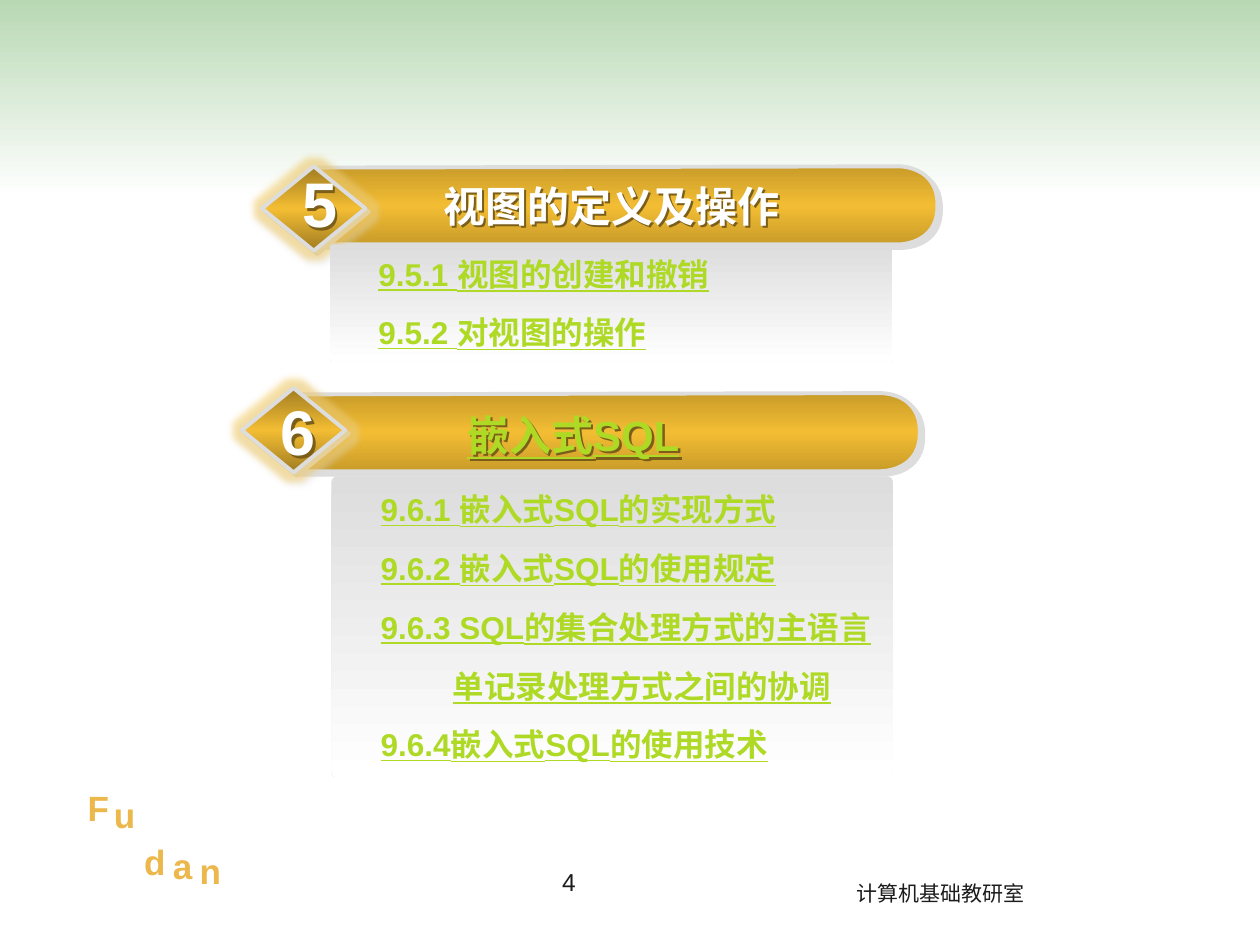
from lxml import etree
from pptx import Presentation
from pptx.dml.color import RGBColor
from pptx.enum.shapes import MSO_SHAPE
from pptx.enum.text import MSO_ANCHOR, PP_ALIGN
from pptx.oxml.ns import qn
from pptx.util import Inches, Pt

RECT, ROUND, DIAMOND = MSO_SHAPE.RECTANGLE, MSO_SHAPE.ROUNDED_RECTANGLE, MSO_SHAPE.DIAMOND
LEFT, MID = PP_ALIGN.LEFT, PP_ALIGN.CENTER
TOP, MIDDLE = MSO_ANCHOR.TOP, MSO_ANCHOR.MIDDLE

WIDE, HIGH = 10, 7.5
LATIN, CJK = "Arial", "Noto Sans CJK JP"
HUES = {
    "mint": "B8D8B3", "white": "FFFFFF", "ink": "1C1C1C", "lime": "AED925",
    "grey": "DDDDDD", "gold": "F3BD33", "ochre": "C99C2A", "bronze": "A07C22",
    "sand": "ECBA58", "honey": "ECB74B", "amber": "D9A622", "dusk": "7A5E19",
}
BAR_W, BAR_H = 4.96, 0.62
LETTERS = [("F", 0.31, 6.19), ("u", 0.52, 6.25), ("d", 0.76, 6.62),
           ("a", 0.98, 6.65), ("n", 1.2, 6.69)]
PARTS = [
    dict(num="5", bar=(2.49, 1.32), gem=(2.08, 1.32), mark=(2.3, 1.26),
         head="视图的定义及操作", spot=(2.89, 1.38, 3.92, 0.5), link=False,
         box=(2.62, 1.94, 4.46, 0.93),
         rows=["9.5.1 视图的创建和撤销", "9.5.2 对视图的操作"]),
    dict(num="6", bar=(2.35, 3.12), gem=(1.92, 3.08), mark=(2.13, 3.07),
         head="嵌入式SQL", spot=(2.75, 3.2, 3.6, 0.5), link=True,
         box=(2.63, 3.78, 4.46, 2.39),
         rows=["9.6.1 嵌入式SQL的实现方式", "9.6.2 嵌入式SQL的使用规定",
               "9.6.3 SQL的集合处理方式的主语言", "单记录处理方式之间的协调",
               "9.6.4嵌入式SQL的使用技术"]),
]


def tint(host, name, alpha=100):
    clr = etree.SubElement(host, qn("a:srgbClr"), val=HUES[name])
    if alpha < 100:
        etree.SubElement(clr, qn("a:alpha"), val=str(alpha * 1000))


def blend(fill, host, names):
    fill.gradient()
    fill.gradient_angle = 270
    stops = host.find(".//" + qn("a:gsLst"))
    for old in list(stops):
        stops.remove(old)
    for i, name in enumerate(names):
        pos = 100000 * i // (len(names) - 1)
        tint(etree.SubElement(stops, qn("a:gs"), pos=str(pos)), name)


def effect(shape, halo=0, drop=0, hue="grey"):
    shape.shadow.inherit = False
    host = shape._element.spPr.find(qn("a:effectLst"))
    if halo:
        tint(etree.SubElement(host, qn("a:glow"), rad=str(Pt(halo))), "gold", 40)
    if drop:
        node = etree.SubElement(host, qn("a:outerShdw"), dist=str(Pt(drop)),
                                dir="2700000", algn="ctr", rotWithShape="0")
        tint(node, hue)


def write(frame, rows, size=18, hue="ink", bold=False, under=False, align=LEFT,
          anchor=TOP, gap=0, dents=None):
    frame.word_wrap = True
    frame.vertical_anchor = anchor
    for i, row in enumerate(rows):
        para = frame.paragraphs[0] if i == 0 else frame.add_paragraph()
        para.alignment = align
        if i:
            para.space_before = Pt(gap)
        if dents:
            props = para._p.get_or_add_pPr()
            props.set("marL", "0")
            props.set("indent", str(Inches(dents[i])))
        run = para.add_run()
        run.text = row
        font = run.font
        font.size, font.bold, font.underline = Pt(size), bold, under
        props = run._r.get_or_add_rPr()
        if isinstance(hue, list):
            blend(font.fill, props, hue)
        else:
            font.color.rgb = RGBColor.from_string(HUES[hue])
        font.name = LATIN
        etree.SubElement(props, qn("a:ea"), typeface=CJK)


def label(slide, box, text, halo=0, drop=0, **form):
    area = slide.shapes.add_textbox(*map(Inches, box))
    write(area.text_frame, [text], **form)
    if halo or drop:
        effect(area, halo, drop, "dusk")


def paint(shape, names, edge=False, halo=0):
    blend(shape.fill, shape._element.spPr, names)
    if edge:
        shape.line.color.rgb = RGBColor.from_string(HUES["grey"])
        shape.line.width = Pt(2.25)
        effect(shape, halo, 2.8)
    else:
        shape.line.fill.background()
        effect(shape)


def block(slide, kind, box, names, **form):
    shape = slide.shapes.add_shape(kind, *map(Inches, box))
    paint(shape, names, **form)
    return shape


def curve(a, b, c, d, steps=16):
    for i in range(1, steps + 1):
        t = i / steps
        u = 1 - t
        yield tuple(u**3 * p + 3 * u * u * t * q + 3 * u * t * t * r + t**3 * s
                    for p, q, r, s in zip(a, b, c, d))


def banner(slide, left, top):
    bend, tip = BAR_W - 0.33, (BAR_W - 0.01, 0.32)
    points = [(0, BAR_H), (bend, BAR_H)]
    points += curve((bend, BAR_H), (4.75, BAR_H), (4.95, 0.56), tip)
    points += curve(tip, (BAR_W, 0.08), (4.78, 0), (bend, 0))
    pen = slide.shapes.build_freeform(0, Inches(0.01))
    pen.add_line_segments([(Inches(x), Inches(y)) for x, y in points], close=True)
    shape = pen.convert_to_shape(Inches(left), Inches(top))
    paint(shape, ["ochre", "gold", "ochre"], edge=True)


def panel(slide, box, rows):
    shape = block(slide, ROUND, box, ["grey", "white"])
    shape.adjustments[0] = 0.02
    shape.text_frame.margin_right = 0
    dents = [0.28 if row.startswith("9") else 0.85 for row in rows]
    write(shape.text_frame, rows, hue="lime", bold=True, under=True,
          anchor=MIDDLE, gap=12, dents=dents)


def part(slide, num, bar, gem, mark, head, spot, link, box, rows):
    banner(slide, *bar)
    block(slide, DIAMOND, (*gem, 0.82, 0.67), ["bronze", "gold", "bronze"],
          edge=True, halo=8)
    label(slide, (*mark, 0.33, 0.7), num, size=36, hue="white", bold=True, drop=2)
    label(slide, spot, head, size=24, hue="lime" if link else "white",
          bold=True, under=link, align=MID, drop=2)
    panel(slide, box, rows)


def main():
    deck = Presentation()
    deck.slide_width, deck.slide_height = Inches(WIDE), Inches(HIGH)
    slide = deck.slides.add_slide(deck.slide_layouts[6])
    block(slide, RECT, (0, 0, WIDE, 1.57), ["mint", "white"])
    label(slide, (6.7, 6.94, 1.71, 0.3), "计算机基础教研室", size=12)
    for text, left, top in LETTERS:
        label(slide, (left, top, 0.94, 0.44), text, size=20, bold=True, align=MID,
              hue=["sand", "honey", "amber", "honey", "sand"], halo=5)
    label(slide, (3.35, 6.83, 2.33, 0.52), "4", size=14, align=MID)
    for item in PARTS:
        part(slide, **item)
    deck.save("out.pptx")


if __name__ == "__main__":
    main()
